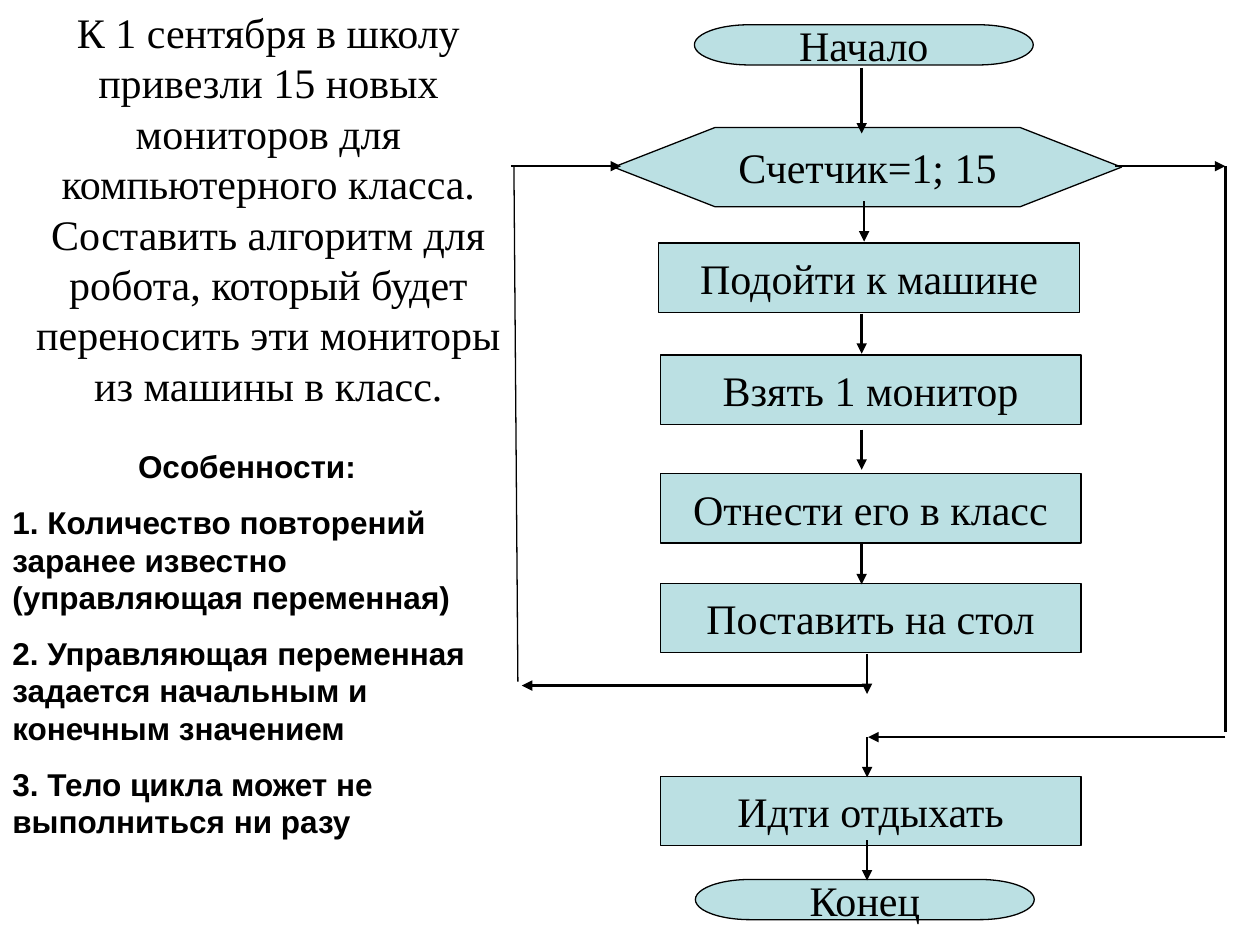
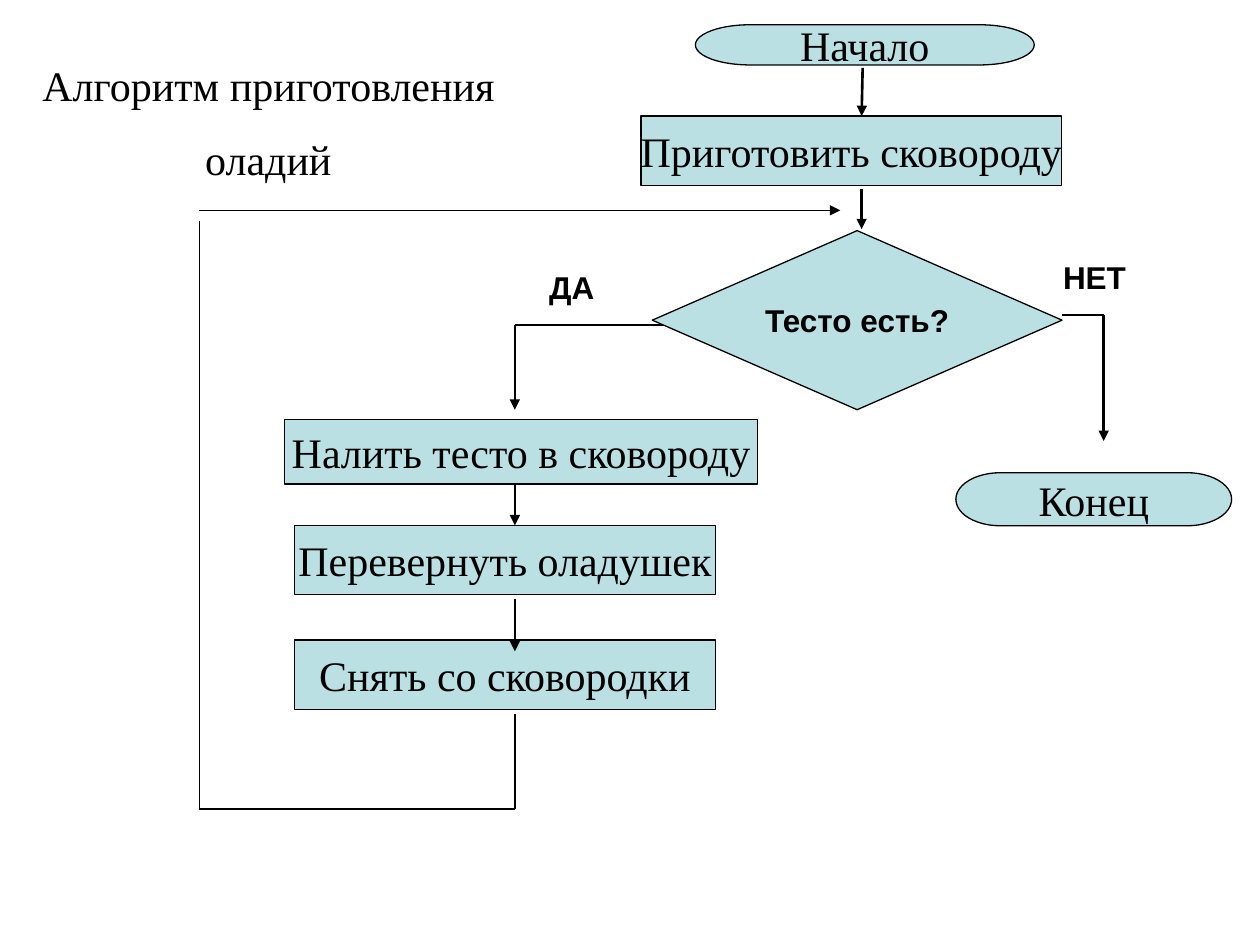
from pptx import Presentation
from pptx.dml.color import RGBColor as RGB
from pptx.enum.shapes import MSO_CONNECTOR as Wire, MSO_SHAPE as Kind
from pptx.enum.text import MSO_ANCHOR as Anchor, MSO_AUTO_SIZE as Fit, PP_ALIGN as Align
from pptx.oxml.ns import qn
from pptx.util import Cm, Pt
from lxml.etree import SubElement as Sub

HUES = {"ink": "000000", "fill": "BBE0E3"}
SERIF = {"name": "Times New Roman", "size": Pt(24), "bold": False}
SANS = {"name": "Arial", "size": Pt(18), "bold": True}
FRAME = {"auto_size": Fit.NONE, "margin_left": Cm(0.25), "margin_right": Cm(0.25),
         "margin_top": Cm(0.13), "margin_bottom": Cm(0.13)}
PLAIN = {**FRAME, "word_wrap": True, "vertical_anchor": Anchor.TOP}
TIGHT = {**FRAME, "word_wrap": False, "vertical_anchor": Anchor.MIDDLE}
STEP = (8.48, 1.4)
CAP = (6.83, 0.81)
THIN, BOLD = 0.75, 1.5


def hue(key):
    """Return the named colour."""
    return RGB.from_string(HUES[key])


def dress(item, form):
    """Set each attribute in the format on the item."""
    for key, val in form.items():
        setattr(item, key, val)


def write(shape, lines, face, frame, aligns, gap=0):
    """Fill a shape with paragraphs, each with its alignment."""
    text = shape.text_frame
    dress(text, frame)
    for i, (line, align) in enumerate(zip(lines, aligns)):
        para = text.add_paragraph() if i else text.paragraphs[0]
        para.text = line
        dress(para, {"alignment": align, "space_before": Pt(gap if i else 0)})
        dress(para.font, face)
        para.font.color.rgb = hue("ink")


def head(slide, box, lines):
    """Place the title in its box."""
    title = slide.shapes.title
    dress(title, dict(zip(("left", "top", "width", "height"), map(Cm, box))))
    write(title, lines, SERIF, PLAIN, [Align.CENTER] * len(lines), 13.5)


def note(slide, box, lines, aligns):
    """Place bold text in a box."""
    shape = slide.shapes.add_textbox(*map(Cm, box))
    write(shape, lines, SANS, PLAIN, aligns, 10)


def block(slide, base, kind, spot, size, label, face=SERIF):
    """Draw a labelled chart block relative to the base point."""
    left, top = (a + b for a, b in zip(base, spot))
    shape = slide.shapes.add_shape(kind, *map(Cm, (left, top, *size)))
    shape.shadow.inherit = False
    shape.fill.solid()
    shape.fill.fore_color.rgb = hue("fill")
    shape.line.color.rgb = hue("ink")
    shape.line.width = Pt(THIN)
    write(shape, [label], face, TIGHT, [Align.CENTER])


def wire(slide, base, start, end, width=BOLD, tip=True):
    """Draw a line relative to the base point, with an arrow tip if asked."""
    ends = [Cm(a + b) for point in (start, end) for a, b in zip(base, point)]
    line = slide.shapes.add_connector(Wire.STRAIGHT, *ends)
    line.line.color.rgb = hue("ink")
    line.line.width = Pt(width)
    if tip:
        Sub(line.line._get_or_add_ln(), qn("a:tailEnd"), type="triangle")
    Sub(line._element.spPr, qn("a:effectLst"))


def count(slide, box):
    """Draw the counted loop in its box."""
    base, right = box[:2], box[2]
    block(slide, base, Kind.FLOWCHART_TERMINATOR, (3.7, 0), CAP, "Начало")
    block(slide, base, Kind.FLOWCHART_PREPARATION, (2.07, 2.07), (10.24, 1.6), "Счетчик=1; 15")
    steps = [(2.98, 4.4, "Подойти к машине"), (3.01, 6.66, "Взять 1 монитор"),
             (3.01, 9.05, "Отнести его в класс"), (3.01, 11.26, "Поставить на стол"),
             (3.01, 15.15, "Идти отдыхать")]
    for x, y, label in steps:
        block(slide, base, Kind.FLOWCHART_PROCESS, (x, y), STEP, label)
    block(slide, base, Kind.FLOWCHART_TERMINATOR, (3.72, 17.23), CAP, "Конец")

    wire(slide, base, (7.07, 0.87), (7.07, 2.19))
    drops = [(7.12, 3.56), (7.07, 5.82), (7.07, 8.16), (7.07, 10.47),
             (7.18, 12.68), (7.18, 14.36), (7.18, 16.44)]
    for x, y in drops:
        wire(slide, base, (x, y), (x, y + 0.81))

    wire(slide, base, (7.2, 13.32), (0.22, 13.32))
    wire(slide, base, (0.14, 13.24), (0.06, 2.85), THIN, False)
    wire(slide, base, (0, 2.85), (2.22, 2.85))
    wire(slide, base, (12.18, 2.85), (right, 2.85))
    wire(slide, base, (right, 2.85), (right, 14.26), tip=False)
    wire(slide, base, (right, 14.36), (7.2, 14.36))


def test(slide, box):
    """Draw the loop with a condition in its box."""
    base = box[:2]
    block(slide, base, Kind.FLOWCHART_TERMINATOR, (10, 0), CAP, "Начало")
    block(slide, base, Kind.FLOWCHART_TERMINATOR, (15.25, 9.03), (5.56, 1.07), "Конец")
    steps = [(8.9, 1.84, STEP, "Приготовить сковороду"),
             (1.72, 7.96, (9.53, 1.3), "Налить тесто в сковороду"),
             (1.92, 10.09, STEP, "Перевернуть оладушек"),
             (1.92, 12.4, STEP, "Снять со сковородки")]
    for x, y, size, label in steps:
        block(slide, base, Kind.FLOWCHART_PROCESS, (x, y), size, label)
    block(slide, base, Kind.DIAMOND, (9.13, 4.15), (8.26, 3.61), "Тесто есть?", SANS)

    wire(slide, base, (13.37, 0.87), (13.35, 1.84))
    wire(slide, base, (13.35, 3.31), (13.35, 4.12))
    wire(slide, base, (17.39, 5.85), (18.23, 5.85), THIN, False)
    wire(slide, base, (18.23, 5.85), (18.23, 8.39))
    wire(slide, base, (9.35, 6.05), (6.36, 6.05), tip=False)
    for y, low in [(6.05, 7.76), (9.23, 10.09), (11.57, 12.63)]:
        wire(slide, base, (6.36, y), (6.36, low), THIN)

    back = [(6.36, 13.9), (6.36, 15.81), (0, 15.81), (0, 3.95)]
    for start, end in zip(back, back[1:]):
        wire(slide, base, start, end, THIN, False)
    wire(slide, base, (0, 3.74), (12.92, 3.74), THIN)

    for x, y, wide, label in [(6.8, 4.78, 1.7, "ДА"), (17.16, 4.58, 2.34, "НЕТ")]:
        note(slide, (base[0] + x, base[1] + y, wide, 1.02), [label], [Align.LEFT])


def main():
    """Build both slides and save them."""
    deck = Presentation()
    dress(deck, {"slide_width": Cm(25.4), "slide_height": Cm(19.05)})
    first, second = (deck.slides.add_slide(deck.slide_layouts[5]) for _ in range(2))

    head(first, (0, 0, 10.82, 8.38), [
        "К 1 сентября в школу привезли 15 новых мониторов для компьютерного класса. "
        "Составить алгоритм для робота, который будет переносить эти мониторы "
        "из машины в класс."])
    count(first, (10.3, 0.5, 14.4, 18.04))
    note(first, (0, 8.89, 9.96, 8.28), [
        "Особенности:",
        "1. Количество повторений заранее известно (управляющая переменная)",
        "2. Управляющая переменная задается начальным и конечным значением",
        "3. Тело цикла может не выполниться ни разу"],
        [Align.CENTER] + [Align.LEFT] * 3)

    head(second, (0, 1.07, 10.82, 2.79), ["Алгоритм приготовления", "оладий"])
    test(second, (4.02, 0.5, 20.81, 15.81))
    deck.save("out.pptx")


if __name__ == "__main__":
    main()
